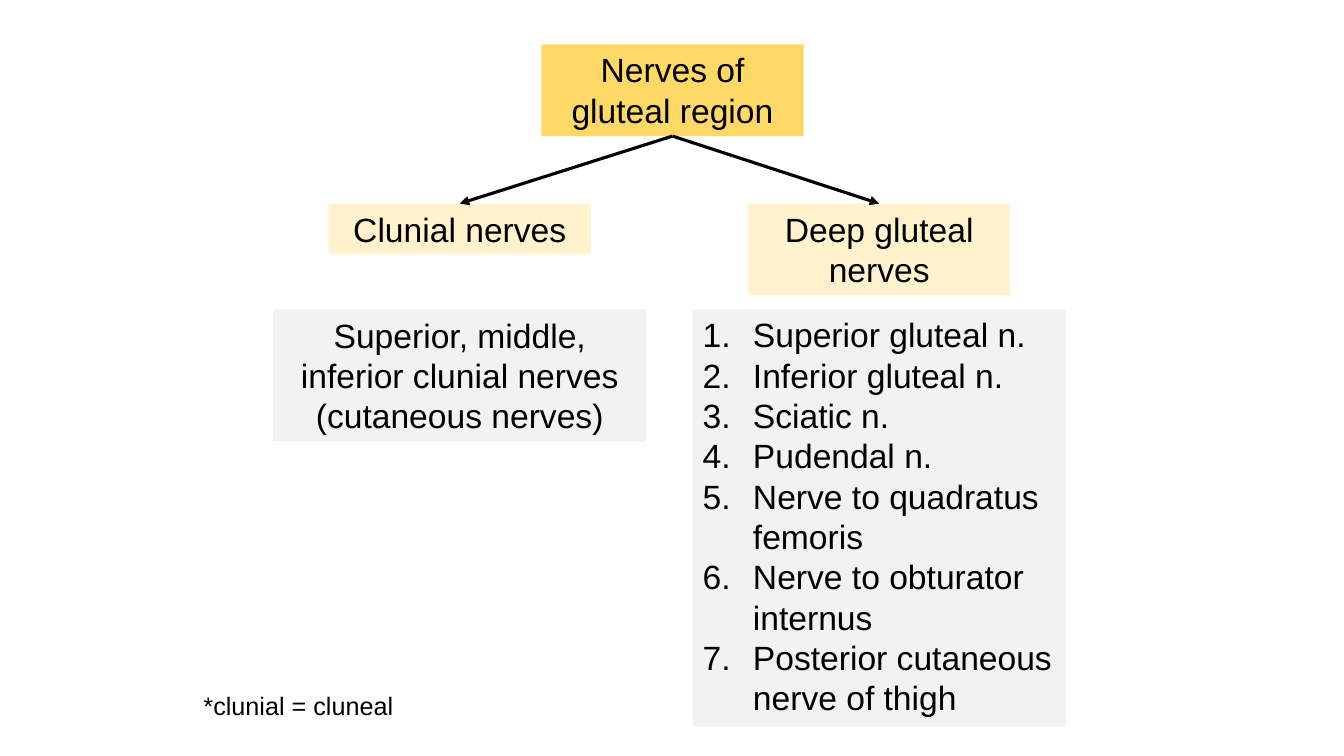
from dataclasses import dataclass

from lxml import etree
from pptx import Presentation
from pptx.dml.color import RGBColor
from pptx.enum.shapes import MSO_CONNECTOR
from pptx.enum.text import MSO_ANCHOR, MSO_AUTO_SIZE, PP_ALIGN
from pptx.oxml.ns import qn
from pptx.util import Inches, Pt

STRAIGHT = MSO_CONNECTOR.STRAIGHT
LEFT, CENTER = PP_ALIGN.LEFT, PP_ALIGN.CENTER
TOP = MSO_ANCHOR.TOP
GROW = MSO_AUTO_SIZE.SHAPE_TO_FIT_TEXT
SIDE_TOP, SIDE_BOTTOM = 0, 2


@dataclass
class Theme:
    font: str = "Arial"
    body: int = 24
    note: int = 18
    ink: str = "000000"
    root: str = "FFD966"
    branch: str = "FFF2CC"
    detail: str = "F2F2F2"


theme = Theme()
deck = Presentation()
deck.slide_width, deck.slide_height = Inches(13.33), Inches(7.5)
page = deck.slides.add_slide(deck.slide_layouts[6])


def add_text(lines, left, top, width, height, fill=None, size=theme.body,
             align=CENTER, numbered=False, wrap=True):
    box = page.shapes.add_textbox(Inches(left), Inches(top), Inches(width), Inches(height))
    if fill:
        box.fill.solid()
        box.fill.fore_color.rgb = RGBColor.from_string(fill)
    frame = box.text_frame
    frame.word_wrap = wrap
    frame.auto_size = GROW
    frame.vertical_anchor = TOP
    for index, line in enumerate(lines):
        para = frame.add_paragraph() if index else frame.paragraphs[0]
        para.alignment = align
        span = para.add_run()
        span.text = line
        span.font.name = theme.font
        span.font.size = Pt(size)
        span.font.color.rgb = RGBColor.from_string(theme.ink)
        if numbered:
            properties = para._p.get_or_add_pPr()
            properties.set("marL", str(Inches(0.5)))
            properties.set("indent", str(Inches(-0.5)))
            etree.SubElement(properties, qn("a:buFont"), typeface="+mj-lt")
            etree.SubElement(properties, qn("a:buAutoNum"), type="arabicPeriod")
    return box


# Root and its two branches
root = add_text(["Nerves of gluteal region"], 5.37, 0.44, 2.6, 0.91, theme.root)
clunial = add_text(["Clunial nerves"], 3.26, 2.02, 2.6, 0.5, theme.branch)
deep = add_text(["Deep gluteal nerves"], 7.42, 2.02, 2.6, 0.91, theme.branch)

# Details under each branch
add_text(["Superior, middle, inferior clunial nerves", "(cutaneous nerves)"],
         2.71, 3.07, 3.7, 1.31, theme.detail)
deep_nerves = [
    "Superior gluteal n.",
    "Inferior gluteal n.",
    "Sciatic n.",
    "Pudendal n.",
    "Nerve to quadratus femoris",
    "Nerve to obturator internus",
    "Posterior cutaneous nerve of thigh",
]
add_text(deep_nerves, 6.87, 3.07, 3.7, 4.14, theme.detail, align=LEFT, numbered=True)

# Arrows from the root to each branch
for branch in (deep, clunial):
    arrow = page.shapes.add_connector(STRAIGHT, 0, 0, 0, 0)
    arrow.begin_connect(root, SIDE_BOTTOM)
    arrow.end_connect(branch, SIDE_TOP)
    arrow.line.color.rgb = RGBColor.from_string(theme.ink)
    arrow.line.width = Pt(2.25)
    etree.SubElement(arrow.line._get_or_add_ln(), qn("a:tailEnd"), type="triangle")
    etree.SubElement(arrow._element.spPr, qn("a:effectLst"))

# Spelling note
add_text(["*clunial = cluneal"], 1.91, 6.8, 2.1, 0.4, size=theme.note, wrap=False)

deck.save("out.pptx")
